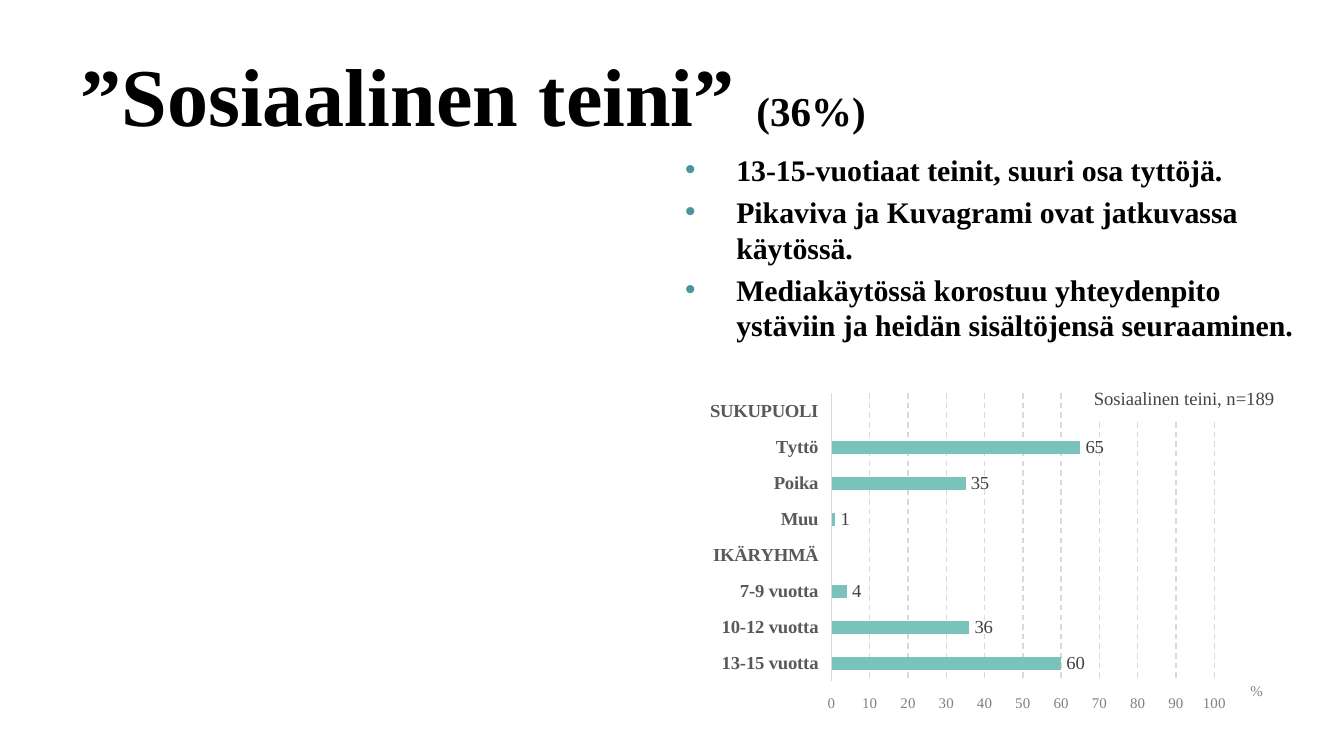
from lxml import etree
from pptx import Presentation
from pptx.chart.data import CategoryChartData
from pptx.dml.color import RGBColor
from pptx.enum.chart import (XL_CHART_TYPE, XL_LABEL_POSITION,
                             XL_TICK_LABEL_POSITION, XL_TICK_MARK)
from pptx.enum.dml import MSO_LINE
from pptx.enum.shapes import MSO_SHAPE
from pptx.enum.text import MSO_ANCHOR, PP_ALIGN
from pptx.oxml import parse_xml
from pptx.oxml.ns import nsdecls, qn
from pptx.util import Inches, Pt

FONT = "Times New Roman"
COLORS = {"text": "000000", "bullet": "4B949E", "bar": "7AC3BB", "grid": "D9D9D9",
          "category": "595959", "scale": "808080", "value": "404040",
          "caption": "444444", "background": "FFFFFF"}


def color(name):
    return RGBColor.from_string(COLORS[name])


def layout_xml(**values):
    """Manual chart layout; the values are fractions of the chart."""
    items = "".join(f'<c:{key} val="{value}"/>' for key, value in values.items())
    return parse_xml(f'<c:layout {nsdecls("c")}><c:manualLayout>{items}'
                     '</c:manualLayout></c:layout>')


def place(parent, index, **values):
    for layout in parent.findall(qn("c:layout")):
        parent.remove(layout)
    parent.insert(index, layout_xml(**values))


class SlideBuilder:
    def __init__(self, slide):
        self.slide = slide

    def style(self, font, size, name, bold=False):
        font.name = FONT
        font.size = Pt(size)
        font.bold = bold
        font.color.rgb = color(name)

    def text_frame(self, left, top, width, height):
        box = self.slide.shapes.add_textbox(*map(Inches, (left, top, width, height)))
        box.text_frame.word_wrap = True
        return box.text_frame

    def title(self, bounds, runs):
        frame = self.text_frame(*bounds)
        frame.vertical_anchor = MSO_ANCHOR.MIDDLE
        for text, size in runs:
            run = frame.paragraphs[0].add_run()
            run.text = text
            self.style(run.font, size, "text", bold=True)

    def bullets(self, bounds, lines, size=16):
        frame = self.text_frame(*bounds)
        for index, line in enumerate(lines):
            paragraph = frame.add_paragraph() if index else frame.paragraphs[0]
            paragraph.text = line
            if index:
                paragraph.space_before = Pt(0.2 * size)
            properties = paragraph._p.get_or_add_pPr()
            properties.set("marL", str(Inches(0.38)))
            properties.set("indent", str(-Inches(0.38)))
            bullet_color = etree.SubElement(properties, qn("a:buClr"))
            etree.SubElement(bullet_color, qn("a:srgbClr"), val=COLORS["bullet"])
            etree.SubElement(properties, qn("a:buFont"), typeface="Arial")
            etree.SubElement(properties, qn("a:buChar"), char="•")
            self.style(paragraph.font, size, "text", bold=True)

    def bar_chart(self, bounds, rows):
        data = CategoryChartData()
        data.categories = [label for label, _ in rows]
        data.add_series("Series 1", [value for _, value in rows])
        chart = self.slide.shapes.add_chart(
            XL_CHART_TYPE.BAR_CLUSTERED, *map(Inches, bounds), data).chart
        chart.has_legend = False
        chart.has_title = False
        self.style(chart.font, 10, "text")
        place(chart._chartSpace.chart.plotArea, 0, layoutTarget="inner", xMode="edge",
              yMode="edge", x=0.267, y=0, w=0.61, h=0.92)

        # Bars and value labels
        plot = chart.plots[0]
        plot.gap_width = 182
        plot.vary_by_categories = False
        fill = plot.series[0].format.fill
        fill.solid()
        fill.fore_color.rgb = color("bar")
        labels = plot.series[0].data_labels
        labels.show_value = True
        labels.position = XL_LABEL_POSITION.OUTSIDE_END
        labels.number_format = "#,##0"
        labels.number_format_is_linked = False
        self.style(labels.font, 10, "value")

        # Category axis, first category at the top
        categories = chart.category_axis
        categories.reverse_order = True
        categories.tick_label_position = XL_TICK_LABEL_POSITION.LOW
        categories.format.line.color.rgb = color("grid")
        categories.format.line.width = Pt(0.75)
        self.style(categories.tick_labels.font, 10, "category", bold=True)

        # Percentage axis, labels below the reversed categories
        scale = chart.value_axis
        scale.minimum_scale, scale.maximum_scale, scale.major_unit = 0, 100, 10
        scale.tick_label_position = XL_TICK_LABEL_POSITION.HIGH
        scale.format.line.fill.background()
        self.style(scale.tick_labels.font, 8, "scale")
        grid = scale.major_gridlines.format.line
        grid.color.rgb = color("grid")
        grid.width = Pt(0.75)
        grid.dash_style = MSO_LINE.DASH
        for axis in (categories, scale):
            axis.major_tick_mark = axis.minor_tick_mark = XL_TICK_MARK.NONE
        paragraph = scale.axis_title.text_frame.paragraphs[0]
        run = paragraph.add_run()
        run.text = "%"
        self.style(run.font, 8, "scale")
        place(scale.axis_title._element, 1, xMode="edge", yMode="edge", x=0.93, y=0.91)

    def caption(self, bounds, text):
        shape = self.slide.shapes.add_shape(MSO_SHAPE.RECTANGLE, *map(Inches, bounds))
        shape.shadow.inherit = False
        shape.fill.solid()
        shape.fill.fore_color.rgb = color("background")
        shape.line.fill.background()
        frame = shape.text_frame
        frame.word_wrap = True
        frame.vertical_anchor = MSO_ANCHOR.TOP
        paragraph = frame.paragraphs[0]
        paragraph.text = text
        paragraph.alignment = PP_ALIGN.LEFT
        paragraph.line_spacing = 0.9
        self.style(paragraph.font, 10, "caption")


def main():
    presentation = Presentation()
    presentation.slide_width = Inches(10)
    presentation.slide_height = Inches(10 * 9 / 16)
    builder = SlideBuilder(presentation.slides.add_slide(presentation.slide_layouts[6]))

    # Heading and description
    builder.title((0.5, 0.23, 9, 0.94), [("”Sosiaalinen teini” ", 44), ("(36%)", 22)])
    builder.bullets((5, 1.08, 4.81, 3.62), [
        "13-15-vuotiaat teinit, suuri osa tyttöjä.",
        "Pikaviva ja Kuvagrami ovat jatkuvassa käytössä.",
        "Mediakäytössä korostuu yhteydenpito ystäviin ja heidän sisältöjensä seuraaminen.",
    ])

    # Gender and age profile
    builder.bar_chart((4.94, 2.92, 4.67, 2.37), [
        ("SUKUPUOLI", None), ("Tyttö", 65), ("Poika", 35), ("Muu", 1),
        ("IKÄRYHMÄ", None), ("7-9 vuotta", 4), ("10-12 vuotta", 36), ("13-15 vuotta", 60),
    ])
    builder.caption((8.04, 2.85, 1.57, 0.28), "Sosiaalinen teini, n=189")

    presentation.save("out.pptx")


if __name__ == "__main__":
    main()
